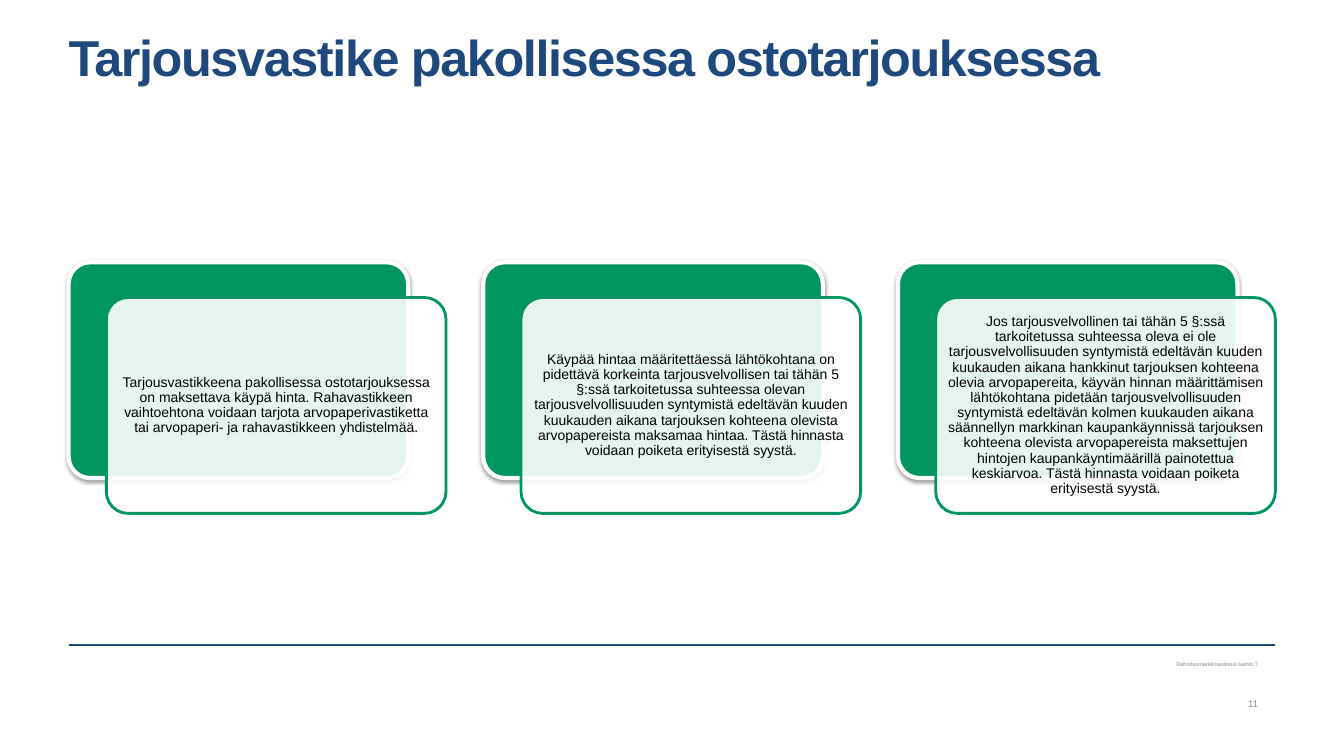
from lxml import etree
from pptx import Presentation
from pptx.dml.color import RGBColor
from pptx.enum.shapes import MSO_CONNECTOR, MSO_SHAPE
from pptx.enum.text import MSO_ANCHOR, PP_ALIGN
from pptx.oxml.ns import qn
from pptx.util import Pt

ROUNDED = MSO_SHAPE.ROUNDED_RECTANGLE
STRAIGHT = MSO_CONNECTOR.STRAIGHT
TOP, MIDDLE = MSO_ANCHOR.TOP, MSO_ANCHOR.MIDDLE
LEFT, CENTER, RIGHT = PP_ALIGN.LEFT, PP_ALIGN.CENTER, PP_ALIGN.RIGHT

TITLE = "Tarjousvastike pakollisessa ostotarjouksessa"
CARDS = [
    "Tarjousvastikkeena pakollisessa ostotarjouksessa on maksettava käypä hinta. "
    "Rahavastikkeen vaihtoehtona voidaan tarjota arvopaperivastiketta tai "
    "arvopaperi- ja rahavastikkeen yhdistelmää.",
    "Käypää hintaa määritettäessä lähtökohtana on pidettävä korkeinta "
    "tarjousvelvollisen tai tähän 5 §:ssä tarkoitetussa suhteessa olevan "
    "tarjousvelvollisuuden syntymistä edeltävän kuuden kuukauden aikana "
    "tarjouksen kohteena olevista arvopapereista maksamaa hintaa. "
    "Tästä hinnasta voidaan poiketa erityisestä syystä.",
    "Jos tarjousvelvollinen tai tähän 5 §:ssä tarkoitetussa suhteessa oleva ei ole "
    "tarjousvelvollisuuden syntymistä edeltävän kuuden kuukauden aikana hankkinut "
    "tarjouksen kohteena olevia arvopapereita, käyvän hinnan määrittämisen "
    "lähtökohtana pidetään tarjousvelvollisuuden syntymistä edeltävän kolmen "
    "kuukauden aikana säännellyn markkinan kaupankäynnissä tarjouksen kohteena "
    "olevista arvopapereista maksettujen hintojen kaupankäyntimäärillä painotettua "
    "keskiarvoa. Tästä hinnasta voidaan poiketa erityisestä syystä.",
]
FOOTER = "Rahoitusmarkkinaoikeus luento 7"
PAGE = "11"

NAVY, GREEN, WHITE, BLACK, GRAY = "1F497D", "00965E", "FFFFFF", "000000", "8C8C8C"
MARGIN, CONTENT_W = 49, 862
CARD_W, CARD_H, CARD_TOP = 242.6, 154.2, 187.3
FRONT_DX, FRONT_DY = 27, 25.2
PITCH = (CONTENT_W - CARD_W - FRONT_DX) / (len(CARDS) - 1)


def rgb(value):
    return RGBColor.from_string(value)


def write(sp, text, size, color, align=LEFT, anchor=TOP, insets=(0, 0, 0, 0),
          spacing=1.0, after=0, bold=False, tracking=None):
    tf = sp.text_frame
    tf.word_wrap = True
    tf.vertical_anchor = anchor
    tf.margin_left, tf.margin_top, tf.margin_right, tf.margin_bottom = map(Pt, insets)
    p = tf.paragraphs[0]
    p.alignment, p.line_spacing, p.space_after = align, spacing, Pt(after)
    r = p.add_run()
    r.text = text
    r.font.name, r.font.size, r.font.bold = "Arial", Pt(size), bold
    r.font.color.rgb = rgb(color)
    if tracking is not None:
        r.font._element.set("spc", str(tracking))


def textbox(s, x, y, w, h, text, **fmt):
    write(s.shapes.add_textbox(Pt(x), Pt(y), Pt(w), Pt(h)), text, **fmt)


def panel(s, x, y, fill, line, width):
    sp = s.shapes.add_shape(ROUNDED, Pt(x), Pt(y), Pt(CARD_W), Pt(CARD_H))
    sp.adjustments[0] = 0.1
    sp.shadow.inherit = False
    sp.fill.solid()
    sp.fill.fore_color.rgb = rgb(fill)
    sp.line.color.rgb = rgb(line)
    sp.line.width = Pt(width)
    return sp


def set_alpha(color, percent):
    etree.SubElement(color, qn("a:alpha"), val=str(percent * 1000))


def add_shadow(sp):
    effects = sp._element.spPr.find(qn("a:effectLst"))
    shadow = etree.SubElement(effects, qn("a:outerShdw"), blurRad=str(Pt(3.1)),
                              dist=str(Pt(1.6)), dir="5400000", rotWithShape="0")
    set_alpha(etree.SubElement(shadow, qn("a:srgbClr"), val=BLACK), 38)


def card(s, x, text):
    add_shadow(panel(s, x, CARD_TOP, GREEN, WHITE, 3))
    front = panel(s, x + FRONT_DX, CARD_TOP + FRONT_DY, WHITE, GREEN, 2)
    set_alpha(front._element.spPr.find(qn("a:solidFill"))[0], 90)
    write(front, text, size=10, color=BLACK, align=CENTER, anchor=MIDDLE,
          insets=(3, 3, 3, 3), spacing=0.9, after=3.5)


def main():
    prs = Presentation()
    prs.slide_width, prs.slide_height = Pt(960), Pt(540)
    s = prs.slides.add_slide(prs.slide_layouts[6])

    rule = s.shapes.add_connector(STRAIGHT, Pt(MARGIN), Pt(460.8),
                                  Pt(MARGIN + CONTENT_W), Pt(460.8))
    rule.line.color.rgb = rgb(NAVY)
    rule.line.width = Pt(1)
    etree.SubElement(rule._element.spPr, qn("a:effectLst"))

    textbox(s, MARGIN, 25.2, CONTENT_W, 94.3, TITLE, size=36, color=NAVY,
            spacing=0.85, bold=True, tracking=-100)
    for i, text in enumerate(CARDS):
        card(s, MARGIN + i * PITCH, text)

    small = dict(color=GRAY, align=RIGHT, anchor=MIDDLE, insets=(7.2, 3.6, 0, 3.6))
    textbox(s, 518.4, 468.7, 380.2, 12.2, FOOTER, size=4, spacing=0.9, after=6, **small)
    textbox(s, 518.4, 496.1, 380.2, 13, PAGE, size=6.8, **small)

    prs.save("out.pptx")


if __name__ == "__main__":
    main()
